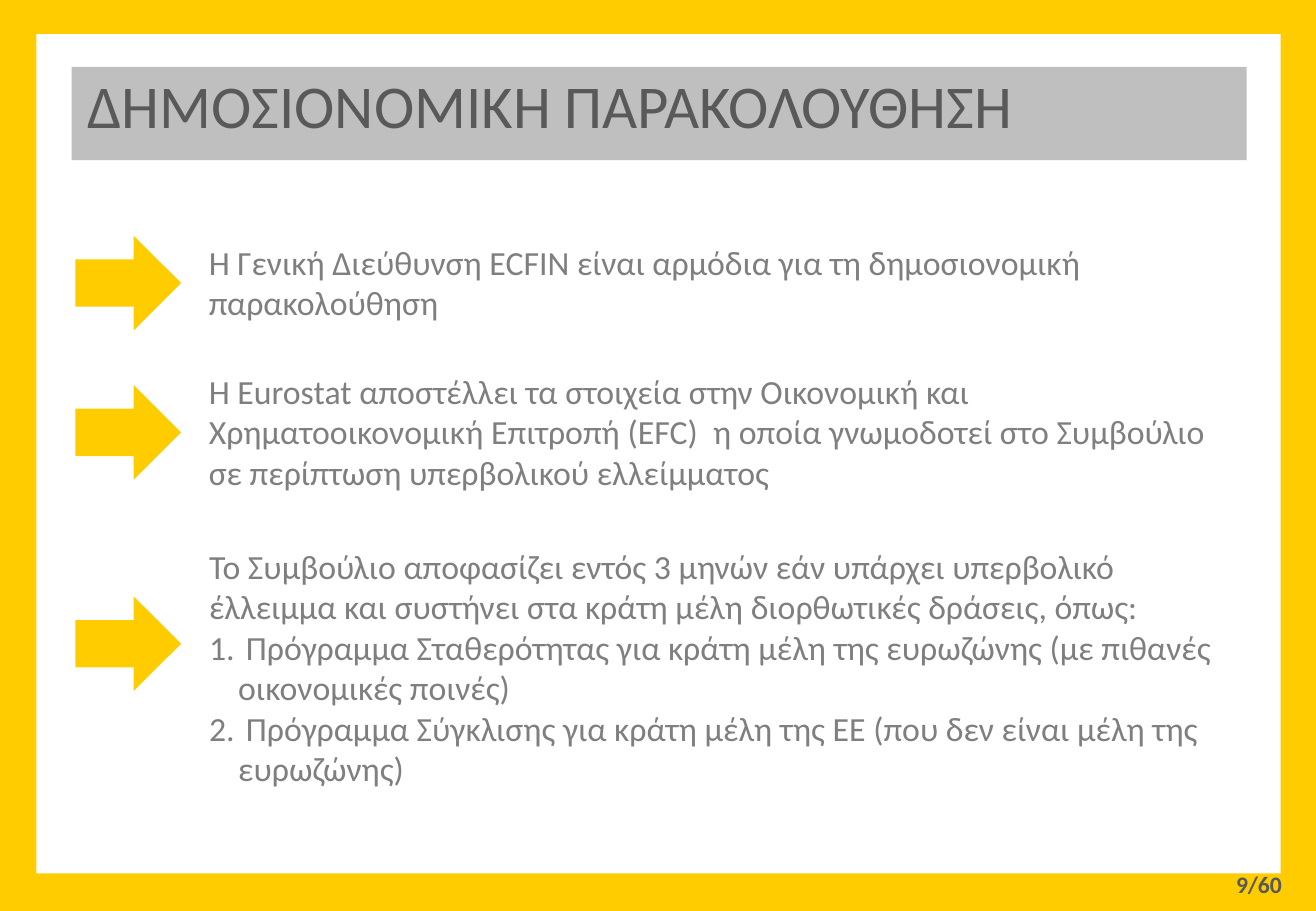
"""Build the slide on fiscal surveillance, with three arrow points."""
from pptx import Presentation
from pptx.dml.color import RGBColor
from pptx.enum.shapes import MSO_SHAPE
from pptx.enum.text import MSO_ANCHOR, MSO_AUTO_SIZE, PP_ALIGN
from pptx.oxml.ns import qn
from pptx.util import Inches, Pt
from lxml import etree

RECTANGLE = MSO_SHAPE.RECTANGLE
RIGHT_ARROW = MSO_SHAPE.RIGHT_ARROW
TOP = MSO_ANCHOR.TOP
NO_AUTOFIT = MSO_AUTO_SIZE.NONE
LEFT = PP_ALIGN.LEFT
RIGHT = PP_ALIGN.RIGHT

YELLOW = RGBColor(0xFF, 0xCC, 0x00)
WHITE = RGBColor(0xFF, 0xFF, 0xFF)
SILVER = RGBColor(0xBF, 0xBF, 0xBF)
DARK_GRAY = RGBColor(0x59, 0x59, 0x59)
GRAY = RGBColor(0x7F, 0x7F, 0x7F)
FONT = "Calibri"

FRAME = [
    ((0, 0, 10.83, 7.5), YELLOW),
    ((0.3, 0.28, 10.24, 6.91), WHITE),
    ((0.59, 0.55, 9.67, 0.77), SILVER),
]
TITLE = "ΔΗΜΟΣΙΟΝΟΜΙΚΗ ΠΑΡΑΚΟΛΟΥΘΗΣΗ"
POINTS = [
    ((1.62, 1.94, 8.56, 0.77),
     "Η Γενική Διεύθυνση ECFIN είναι αρμόδια για τη δημοσιονομική παρακολούθηση"),
    ((1.62, 3, 8.56, 1.11),
     "Η Eurostat αποστέλλει τα στοιχεία στην Οικονομική και Χρηματοοικονομική "
     "Επιτροπή (EFC)  η οποία γνωμοδοτεί στο Συμβούλιο σε περίπτωση "
     "υπερβολικού ελλείμματος"),
]
ACTIONS_BOX = (1.62, 4.44, 8.61, 2.12)
ACTIONS_INTRO = (
    "Το Συμβούλιο αποφασίζει εντός 3 μηνών εάν υπάρχει υπερβολικό έλλειμμα "
    "και συστήνει στα κράτη μέλη διορθωτικές δράσεις, όπως:"
)
ACTIONS = [
    " Πρόγραμμα Σταθερότητας για κράτη μέλη της ευρωζώνης (με πιθανές οικονομικές ποινές)",
    " Πρόγραμμα Σύγκλισης για κράτη μέλη της ΕΕ (που δεν είναι μέλη της ευρωζώνης)",
]
ARROW_TOPS = [1.94, 3.17, 4.91]


def inches(box):
    """Convert a box of numbers to lengths."""
    return [Inches(value) for value in box]


def add_filled_shape(slide, kind, box, color):
    """Add a plain shape without outline or shadow."""
    shape = slide.shapes.add_shape(kind, *inches(box))
    shape.shadow.inherit = False
    shape.fill.solid()
    shape.fill.fore_color.rgb = color
    shape.line.fill.background()


def format_paragraph(paragraph, size, color, bold=False, alignment=LEFT):
    """Set the font, alignment and spacing of a paragraph."""
    paragraph.alignment = alignment
    paragraph.space_before = Pt(0)
    paragraph.font.name = FONT
    paragraph.font.size = Pt(size)
    paragraph.font.bold = bold
    paragraph.font.color.rgb = color


def add_text(slide, box, text, size, color, wrap=True, **style):
    """Add a text box with one paragraph."""
    frame = slide.shapes.add_textbox(*inches(box)).text_frame
    frame.word_wrap = wrap
    frame.text = text
    format_paragraph(frame.paragraphs[0], size, color, **style)


def place_placeholder(slide, placeholder, box):
    """Bring a placeholder to the front, place it and return its text frame."""
    slide.shapes._spTree.append(placeholder._element)
    placeholder.left, placeholder.top, placeholder.width, placeholder.height = inches(box)
    frame = placeholder.text_frame
    frame.word_wrap = True
    frame.auto_size = NO_AUTOFIT
    frame.vertical_anchor = TOP
    return frame


def set_numbering(paragraph, numbered):
    """Number a paragraph with a hanging indent, or clear its bullet."""
    properties = paragraph._p.get_or_add_pPr()
    indent = Inches(0.24) if numbered else 0
    properties.set("marL", str(indent))
    properties.set("indent", str(-indent))
    if numbered:
        etree.SubElement(properties, qn("a:buFontTx"))
        etree.SubElement(properties, qn("a:buAutoNum"), type="arabicPeriod")
    else:
        etree.SubElement(properties, qn("a:buNone"))


def fill_title(slide):
    """Fill the title placeholder."""
    frame = place_placeholder(slide, slide.shapes.title, (0.62, 0.51, 9.6, 0.54))
    frame.text = TITLE
    format_paragraph(frame.paragraphs[0], 36, DARK_GRAY)


def fill_actions(slide):
    """Fill the body placeholder with the introduction and numbered actions."""
    frame = place_placeholder(slide, slide.placeholders[1], ACTIONS_BOX)
    frame.text = "\n".join([ACTIONS_INTRO, *ACTIONS])
    for index, paragraph in enumerate(frame.paragraphs):
        set_numbering(paragraph, index > 0)
        format_paragraph(paragraph, 20, GRAY)


def main():
    """Build and save the presentation."""
    presentation = Presentation()
    presentation.slide_width = Inches(10.83)
    presentation.slide_height = Inches(7.5)
    slide = presentation.slides.add_slide(presentation.slide_layouts[1])
    for box, color in FRAME:
        add_filled_shape(slide, RECTANGLE, box, color)
    fill_title(slide)
    for top in ARROW_TOPS:
        add_filled_shape(slide, RIGHT_ARROW, (0.62, top, 0.87, 0.78), YELLOW)
    for box, text in POINTS:
        add_text(slide, box, text, 20, GRAY)
    fill_actions(slide)
    add_text(slide, (9.93, 7.11, 0.44, 0.4), "9", 14, DARK_GRAY, bold=True, alignment=RIGHT)
    add_text(slide, (10.17, 7.11, 0.48, 0.34), "/60", 14, DARK_GRAY, wrap=False, bold=True)
    presentation.save("out.pptx")


if __name__ == "__main__":
    main()
